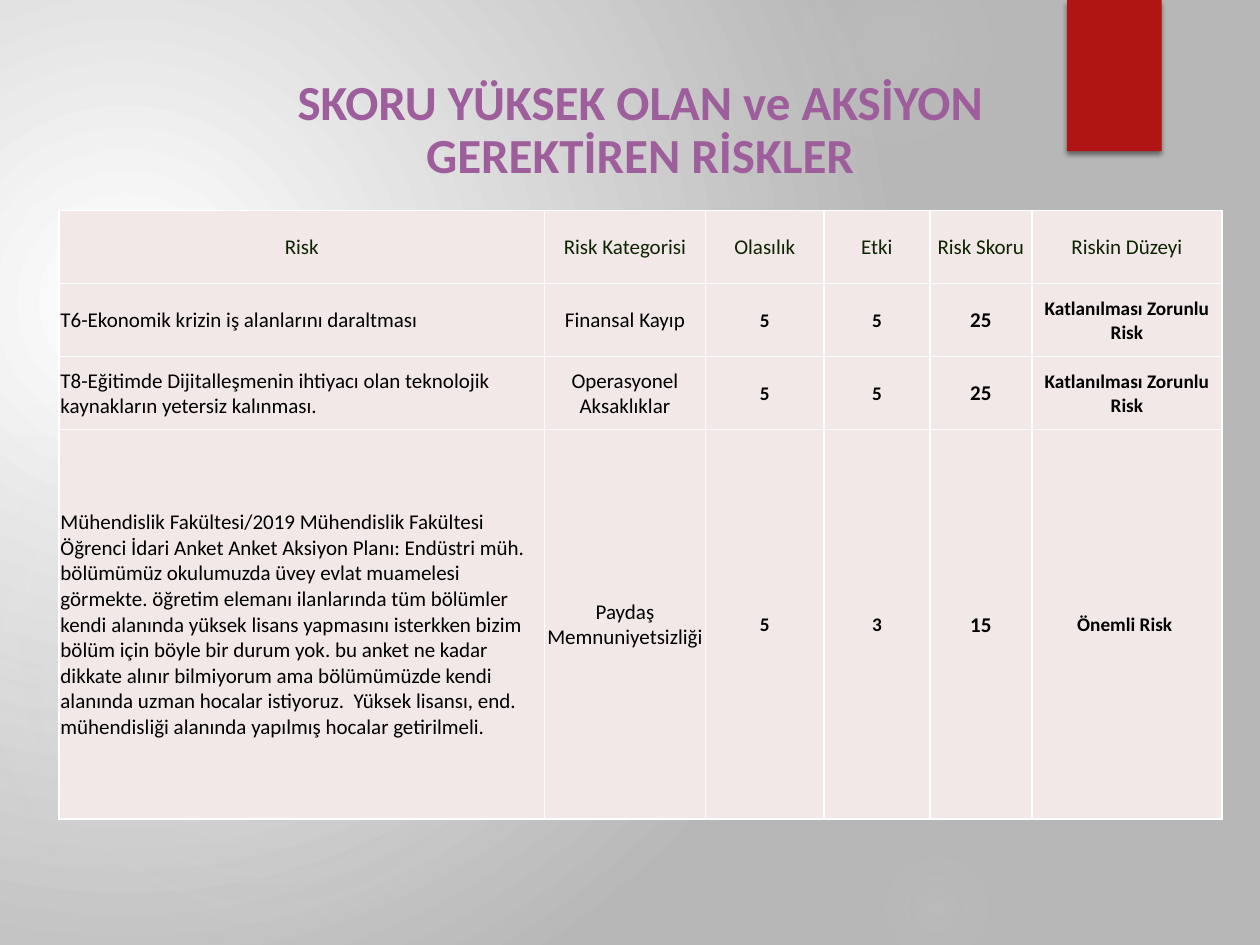
from lxml import etree
from pptx import Presentation
from pptx.dml.color import RGBColor
from pptx.enum.shapes import MSO_SHAPE
from pptx.enum.text import MSO_ANCHOR, MSO_AUTO_SIZE, PP_ALIGN
from pptx.oxml import parse_xml
from pptx.oxml.ns import qn
from pptx.util import Inches, Pt

CENTER, LEFT = PP_ALIGN.CENTER, PP_ALIGN.LEFT
MIDDLE, BOTTOM = MSO_ANCHOR.MIDDLE, MSO_ANCHOR.BOTTOM
NO_AUTOFIT = MSO_AUTO_SIZE.NONE
OVAL, RECTANGLE = MSO_SHAPE.OVAL, MSO_SHAPE.RECTANGLE

FONT = "Calibri"
RED = RGBColor(0xB0, 0x15, 0x13)
PURPLE = RGBColor(0x9E, 0x5E, 0x9B)
DARK_GREEN = RGBColor(0x0F, 0x23, 0x03)
BLACK = RGBColor(0, 0, 0)
WHITE = RGBColor(0xFF, 0xFF, 0xFF)
GRAY = RGBColor(0xB7, 0xB7, 0xB7)
GLOW_GRAY = RGBColor(0xD9, 0xD9, 0xD9)
PALE_PINK = RGBColor(0xF2, 0xE8, 0xE7)
NAMESPACE = 'xmlns:a="http://schemas.openxmlformats.org/drawingml/2006/main"'

TITLE = "SKORU YÜKSEK OLAN ve AKSİYON GEREKTİREN RİSKLER"
HEADERS = ["Risk", "Risk Kategorisi", "Olasılık", "Etki", "Risk Skoru", "Riskin Düzeyi"]
RISKS = [
    ("T6-Ekonomik krizin iş alanlarını daraltması", "Finansal Kayıp",
     "5", "5", "25", "Katlanılması Zorunlu Risk"),
    ("T8-Eğitimde Dijitalleşmenin ihtiyacı olan teknolojik kaynakların yetersiz kalınması.",
     "Operasyonel Aksaklıklar", "5", "5", "25", "Katlanılması Zorunlu Risk"),
    ("Mühendislik Fakültesi/2019 Mühendislik Fakültesi Öğrenci İdari Anket Anket Aksiyon "
     "Planı: Endüstri müh. bölümümüz okulumuzda üvey evlat muamelesi görmekte. öğretim "
     "elemanı ilanlarında tüm bölümler kendi alanında yüksek lisans yapmasını isterkken "
     "bizim bölüm için böyle bir durum yok. bu anket ne kadar dikkate alınır bilmiyorum "
     "ama bölümümüzde kendi alanında uzman hocalar istiyoruz.  Yüksek lisansı, end. "
     "mühendisliği alanında yapılmış hocalar getirilmeli.",
     "Paydaş Memnuniyetsizliği", "5", "3", "15", "Önemli Risk "),
]
COLUMN_WIDTHS = [3.85, 1.28, 0.94, 0.84, 0.81, 1.51]
ROW_HEIGHTS = [0.58, 0.58, 0.58, 3.09]
COLUMN_SIZES = [12, 12, 11, 11, 12, 11]
FIRST_BOLD_COLUMN = 2

# left, top, diameter, gradient stops as (position, opacity)
GLOWS = [
    (6.89, 1.83, 3.08, [(0, 7), (36, 6), (69, 0)]),
    (6.22, -0.5, 1.75, [(0, 14), (36, 7), (73, 0)]),
    (6.89, 6.67, 1.08, [(0, 9), (36, 5), (66, 0)]),
    (-0.17, 2.92, 4.58, [(0, 11), (36, 10), (75, 0)]),
    (-0.92, 3.17, 2.58, [(0, 8), (36, 8), (72, 0)]),
]


def set_radial_gradient(fill, element, stops, focus):
    fill.solid()
    fill.fore_color.rgb = WHITE
    stop_xml = "".join(
        f'<a:gs pos="{position * 1000}"><a:srgbClr val="{color}">'
        f'<a:alpha val="{opacity * 1000}"/></a:srgbClr></a:gs>'
        for position, color, opacity in stops)
    edges = " ".join(f'{side}="{value * 1000}"' for side, value in zip("ltrb", focus))
    gradient = parse_xml(
        f'<a:gradFill {NAMESPACE} rotWithShape="1"><a:gsLst>{stop_xml}</a:gsLst>'
        f'<a:path path="circle"><a:fillToRect {edges}/></a:path></a:gradFill>')
    solid = next(element.iter(qn("a:solidFill")))
    solid.getparent().replace(solid, gradient)


def add_plain_shape(slide, kind, left, top, width, height):
    shape = slide.shapes.add_shape(
        kind, Inches(left), Inches(top), Inches(width), Inches(height))
    shape.shadow.inherit = False
    shape.line.fill.background()
    return shape


def add_decoration(slide):
    for left, top, diameter, stops in GLOWS:
        glow = add_plain_shape(slide, OVAL, left, top, diameter, diameter)
        set_radial_gradient(
            glow.fill, glow._element,
            [(position, GLOW_GRAY, opacity) for position, opacity in stops],
            (50, 50, 50, 50))
    ribbon = add_plain_shape(slide, RECTANGLE, 8.47, 0, 0.75, 1.2)
    ribbon.fill.solid()
    ribbon.fill.fore_color.rgb = RED
    effects = next(ribbon._element.iter(qn("a:effectLst")))
    effects.append(parse_xml(
        f'<a:outerShdw {NAMESPACE} blurRad="{Pt(3)}" dist="{Pt(2)}" dir="5400000" '
        'rotWithShape="0"><a:srgbClr val="000000"><a:alpha val="45000"/>'
        '</a:srgbClr></a:outerShdw>'))


def write(paragraph, text, size, color, bold, alignment):
    paragraph.alignment = alignment
    run = paragraph.add_run()
    run.text = text
    run.font.name = FONT
    run.font.size = Pt(size)
    run.font.bold = bold
    run.font.color.rgb = color


def format_title(slide):
    title = slide.shapes.title
    title.left, title.top = Inches(2.2), Inches(0.58)
    title.width, title.height = Inches(5.76), Inches(0.93)
    frame = title.text_frame
    frame.word_wrap = True
    frame.auto_size = NO_AUTOFIT
    frame.vertical_anchor = BOTTOM
    paragraph = frame.paragraphs[0]
    paragraph.line_spacing = 0.9
    paragraph.space_after = Pt(6)
    write(paragraph, TITLE, 28, PURPLE, True, CENTER)
    slide.shapes._spTree.append(title._element)


def add_borders(cell):
    properties = cell._tc.get_or_add_tcPr()
    for index, side in enumerate(("lnL", "lnR", "lnT", "lnB")):
        border = etree.Element(qn(f"a:{side}"), w=str(Pt(1)))
        fill = etree.SubElement(border, qn("a:solidFill"))
        etree.SubElement(fill, qn("a:srgbClr"), val=str(WHITE))
        properties.insert(index, border)


def add_risk_table(slide):
    rows = [HEADERS, *RISKS]
    table = slide.shapes.add_table(
        len(rows), len(HEADERS), Inches(0.47), Inches(1.67),
        Inches(sum(COLUMN_WIDTHS)), Inches(sum(ROW_HEIGHTS))).table
    for column, width in zip(table.columns, COLUMN_WIDTHS):
        column.width = Inches(width)
    for row, height in zip(table.rows, ROW_HEIGHTS):
        row.height = Inches(height)
    for row_index, texts in enumerate(rows):
        is_header = row_index == 0
        for column_index, text in enumerate(texts):
            cell = table.cell(row_index, column_index)
            cell.margin_left = cell.margin_right = cell.margin_top = Inches(0.01)
            cell.margin_bottom = 0
            cell.vertical_anchor = MIDDLE
            cell.fill.solid()
            cell.fill.fore_color.rgb = PALE_PINK
            add_borders(cell)
            write(cell.text_frame.paragraphs[0], text,
                  12 if is_header else COLUMN_SIZES[column_index],
                  DARK_GREEN if is_header else BLACK,
                  not is_header and column_index >= FIRST_BOLD_COLUMN,
                  CENTER if is_header or column_index else LEFT)


def main():
    presentation = Presentation()
    presentation.slide_width, presentation.slide_height = Inches(10), Inches(7.5)
    slide = presentation.slides.add_slide(presentation.slide_layouts[5])
    set_radial_gradient(slide.background.fill, slide._element,
                        [(0, WHITE, 100), (100, GRAY, 100)], (45, 65, 125, 100))
    add_decoration(slide)
    format_title(slide)
    add_risk_table(slide)
    presentation.save("out.pptx")


if __name__ == "__main__":
    main()
